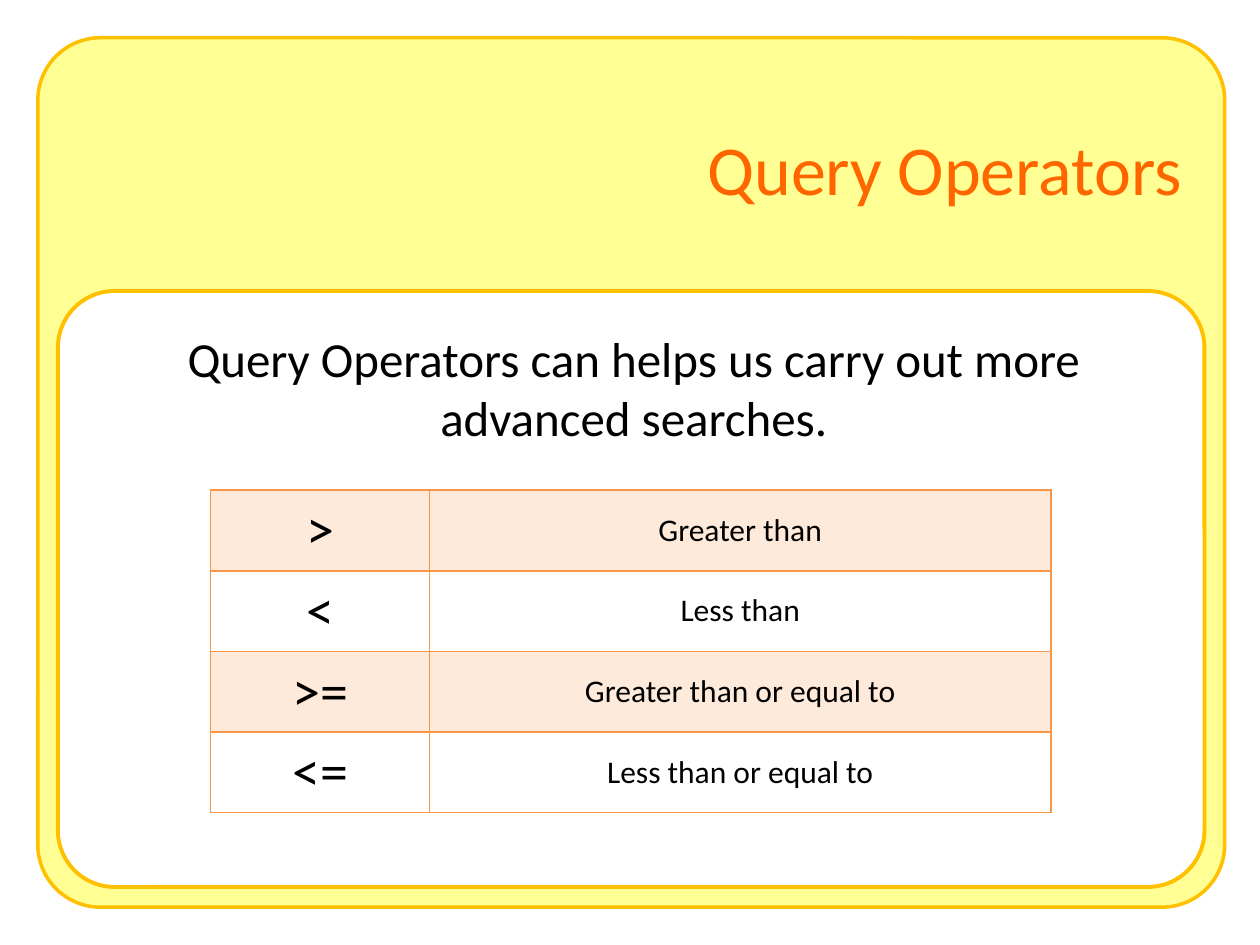
import pptx
import pptx.util
import pptx.dml.color
import pptx.enum.shapes
import pptx.enum.text
import pptx.oxml
import pptx.oxml.ns
from lxml import etree

Inches, Pt = pptx.util.Inches, pptx.util.Pt
ALIGN = pptx.enum.text.PP_ALIGN
MIDDLE = pptx.enum.text.MSO_ANCHOR.MIDDLE
TOP = pptx.enum.text.MSO_ANCHOR.TOP

TITLE = "Query Operators"
INTRO = "Query Operators can helps us carry out more advanced searches."
OPERATORS = [
    (">", "Greater than"),
    ("<", "Less than"),
    (">=", "Greater than or equal to"),
    ("<=", "Less than or equal to"),
]
# left, top, width, height, corner, fill, line width
PANELS = [
    (0.3, 0.3, 9.42, 6.9, 0.072, "FFFF93", 2),
    (0.46, 2.31, 9.1, 4.73, 0.095, "FFFFFF", 2.25),
]
COLUMNS = [1.74, 4.93]
ROW_HEIGHT = 0.64
THEME = {
    "font": "Calibri",
    "title": "FF6600", "text": "000000", "outline": "FFC000", "accent": "F79646",
    "title_size": 40, "intro_size": 28, "symbol_size": 32, "meaning_size": 18,
    "band_opacity": 20,
}


def rgb(name):
    return pptx.dml.color.RGBColor.from_string(name)


def write(frame, text, size, color, align, anchor):
    frame.word_wrap = True
    frame.vertical_anchor = anchor
    para = frame.paragraphs[0]
    para.alignment = align
    span = para.add_run()
    span.text = text
    span.font.name = THEME["font"]
    span.font.size = Pt(size)
    span.font.bold = False
    span.font.color.rgb = rgb(color)


def add_panel(page, left, top, width, height, corner, fill, line_width):
    panel = page.shapes.add_shape(
        pptx.enum.shapes.MSO_SHAPE.ROUNDED_RECTANGLE,
        Inches(left), Inches(top), Inches(width), Inches(height))
    panel.adjustments[0] = corner
    panel.shadow.inherit = False
    panel.fill.solid()
    panel.fill.fore_color.rgb = rgb(fill)
    panel.line.color.rgb = rgb(THEME["outline"])
    panel.line.width = Pt(line_width)


def style_cell(cell, banded):
    """Draw all four borders, then a translucent band or no fill."""
    properties = cell._tc.get_or_add_tcPr()
    for side in ("lnL", "lnR", "lnT", "lnB"):
        properties.append(pptx.oxml.parse_xml(
            f'<a:{side} {pptx.oxml.ns.nsdecls("a")} w="{Pt(1)}"><a:solidFill>'
            f'<a:srgbClr val="{THEME["accent"]}"/></a:solidFill></a:{side}>'))
    if not banded:
        cell.fill.background()
        return
    cell.fill.solid()
    cell.fill.fore_color.rgb = rgb(THEME["accent"])
    qn = pptx.oxml.ns.qn
    color = properties.find(qn("a:solidFill")).find(qn("a:srgbClr"))
    etree.SubElement(color, qn("a:alpha"), val=str(THEME["band_opacity"] * 1000))


def add_operator_table(page):
    table = page.shapes.add_table(
        len(OPERATORS), len(COLUMNS), Inches(1.67), Inches(3.89),
        Inches(sum(COLUMNS)), Inches(ROW_HEIGHT * len(OPERATORS))).table
    table.first_row = table.horz_banding = False
    for column, width in zip(table.columns, COLUMNS):
        column.width = Inches(width)
    formats = [(THEME["symbol_size"], TOP), (THEME["meaning_size"], MIDDLE)]
    for row, texts in enumerate(OPERATORS):
        for column, (text, (size, anchor)) in enumerate(zip(texts, formats)):
            cell = table.cell(row, column)
            style_cell(cell, banded=row % 2 == 0)
            write(cell.text_frame, text, size, THEME["text"], ALIGN.CENTER, TOP)
            cell.vertical_anchor = anchor


def main():
    deck = pptx.Presentation()
    deck.slide_width, deck.slide_height = Inches(10), Inches(7.5)
    page = deck.slides.add_slide(deck.slide_layouts[5])
    for panel in PANELS:
        add_panel(page, *panel)

    title = page.shapes.title
    page.shapes.element.append(title.element)  # bring in front of the panels
    title.left, title.top = Inches(2.41), Inches(0.56)
    title.width, title.height = Inches(7.07), Inches(1.54)
    write(title.text_frame, TITLE, THEME["title_size"], THEME["title"],
          ALIGN.RIGHT, MIDDLE)

    intro = page.shapes.add_textbox(
        Inches(0.7), Inches(2.56), Inches(8.66), Inches(1.07))
    write(intro.text_frame, INTRO, THEME["intro_size"], THEME["text"],
          ALIGN.CENTER, TOP)
    add_operator_table(page)
    deck.save("out.pptx")


if __name__ == "__main__":
    main()
